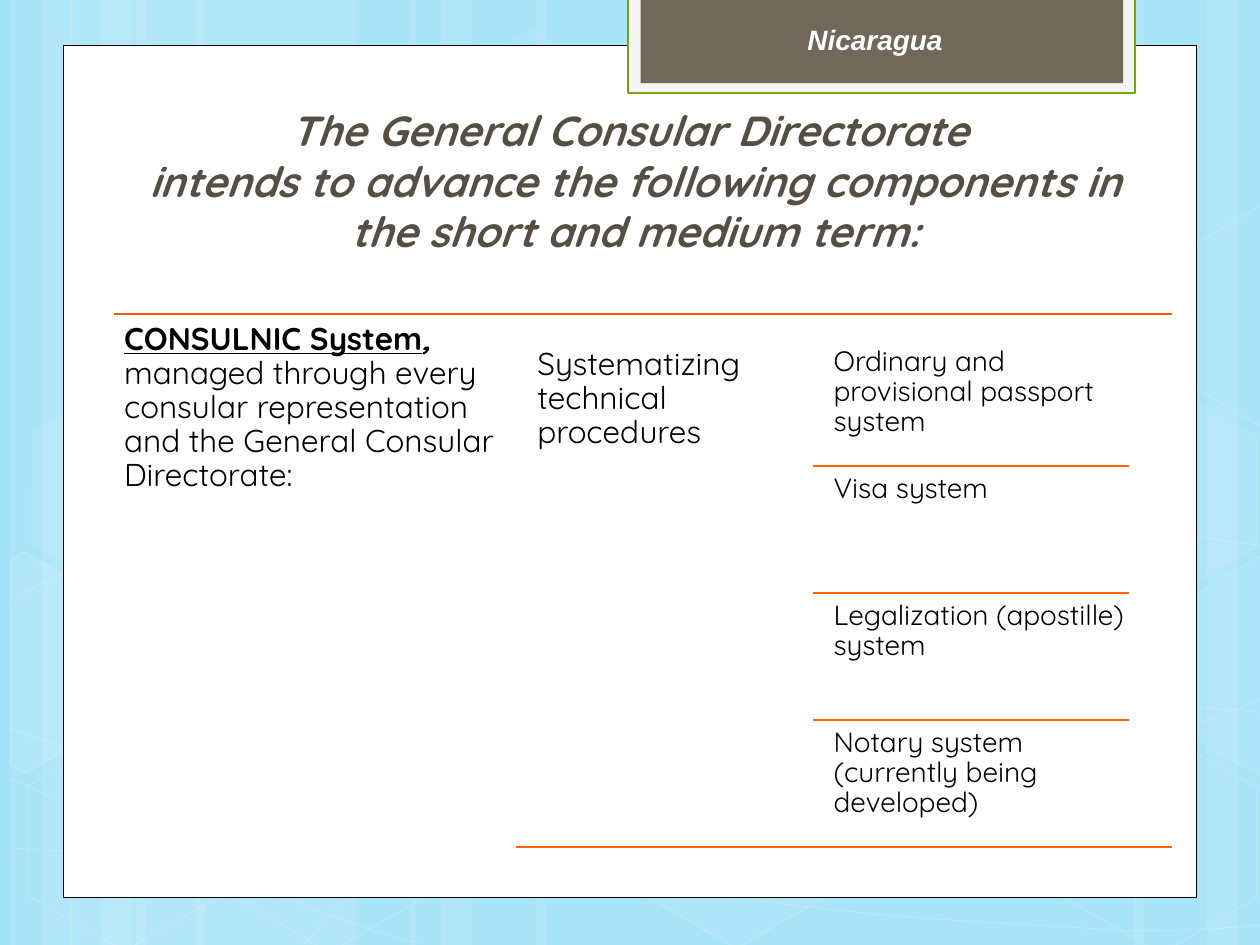
from lxml.etree import SubElement
from pptx import Presentation
from pptx.dml.color import RGBColor
from pptx.enum.shapes import MSO_CONNECTOR as Link, MSO_SHAPE as Preset
from pptx.enum.text import MSO_ANCHOR as Anchor, PP_ALIGN as Align
from pptx.oxml.ns import qn
from pptx.util import Inches, Pt

WHITE = RGBColor(0xFF, 0xFF, 0xFF)
BLACK = RGBColor(0x00, 0x00, 0x00)
SKY = RGBColor(0xA1, 0xE2, 0xF9)
PALE = RGBColor(0xF5, 0xF5, 0xF5)
GREEN = RGBColor(0x74, 0xA5, 0x10)
TAUPE = RGBColor(0x71, 0x68, 0x5A)
BROWN = RGBColor(0x55, 0x4E, 0x43)
RUST = RGBColor(0xE7, 0x5D, 0x00)
ORANGE = RGBColor(0xFF, 0x67, 0x00)

COLS, ROWS = 100, 75

# Each streak: left column, width in columns
STREAKS = [(10.8, 17.5), (0.8, 5), (3.3, 8.3), (15.5, 17.5), (5.5, 5), (8, 8.3),
           (73.3, 17.5), (95.8, 5), (90, 8.3), (42.5, 30.8), (32.5, 5), (35, 8.3)]

# Each wave: a start point, then three Bezier points per segment
WAVES = [
    [(0.7, 67.3), (6.1, 67.6), (11.5, 67.9), (19, 67.8), (26.5, 67.7), (35.8, 67.5),
     (45.8, 66.5), (55.8, 65.5), (70, 63.6), (79.2, 61.7), (88.3, 59.8), (97.7, 56.8),
     (100.7, 55.1)],
    [(0.7, 47.7), (3.6, 46.1), (6.5, 44.6), (12.1, 43.1), (17.8, 41.6), (25.9, 39.4),
     (34.7, 38.7), (43.6, 38), (54.4, 37.9), (65.4, 38.7), (76.4, 39.5), (94.7, 42.6),
     (100.7, 43.4)],
    [(0.6, 61.7), (12.7, 67.2), (24.7, 72.7), (33.4, 74.9)],
    [(0.7, 57.8), (3.8, 58.9), (7, 60), (12.8, 61.6), (18.6, 63.1), (27.3, 65.6),
     (35.7, 67.3), (44, 69), (54.5, 70.8), (62.8, 71.8), (71.1, 72.9), (80, 73.3),
     (85.3, 73.6), (90.5, 74), (91.9, 73.8), (94.5, 73.8), (97.1, 73.7), (98.9, 73.5),
     (100.7, 73.4)],
    [(24.2, 74.9), (26, 72.9), (27.8, 70.9), (30.2, 69.1), (32.6, 67.3), (36, 65.3),
     (38.8, 63.9), (41.6, 62.5), (43.3, 61.9), (47, 60.9), (50.6, 59.9), (57.3, 58.5),
     (60.8, 57.8), (64.4, 57.1), (64.9, 57.1), (68, 56.9), (71.1, 56.6), (76, 56.3),
     (79.4, 56.2), (82.9, 56.1), (88.6, 56.2), (88.6, 56.2), (90.8, 56.2), (93.1, 56.2),
     (95.3, 56.2), (97.1, 56.3), (98.8, 56.4), (99.7, 56.5), (100.6, 56.6), (100.3, 56.5),
     (100.6, 56.6)],
]
WAVES[-1][-4:] = [(100.6, 56.6)]

# Each hexagon: left column, top row, fill opacity (None for no fill), line opacity
HEXAGONS = [(33.4, 3.6, 4, 8), (49.7, 58.9, 6, 12), (1.1, 59.1, None, 12),
            (1.4, 31.2, 7, 8), (17.4, 59.2, None, 12), (75.3, 45.3, 10, 12),
            (83.4, 59.3, None, 12), (83.4, 31.4, 7, 8)]

# Hexagons cut by the slide's edge: outline, fill opacity
CUT_HEXAGONS = [
    ([(0.8, 44.5), (1.9, 43.8), (9.6, 48.2), (9.5, 57), (2, 61.4), (0.8, 60.7)], 10),
    ([(92.6, 48.5), (100.1, 44.1), (100.9, 44.6), (100.9, 61.3), (100.2, 61.7),
      (92.6, 57.3)], 4),
    ([(92.6, 20.7), (100.1, 16.3), (101, 16.8), (100.9, 33.5), (100.2, 33.9),
      (92.6, 29.5)], None),
]

SYSTEMS = ["Ordinary and provisional passport system", "Visa system",
           "Legalization (apostille) system", "Notary system (currently being developed)"]


def write(paragraph, text, size=18, font="Quicksand", color=BLACK, bold=False,
          italic=False, underline=False):
    run = paragraph.add_run()
    run.text = text
    style = run.font
    style.name, style.size, style.color.rgb = font, Pt(size), color
    style.bold, style.italic, style.underline = bold, italic, underline


def set_alpha(holder, percent):
    """Make the solid fill inside a fill or line element see-through."""
    color = holder.find(f"{qn('a:solidFill')}/{qn('a:srgbClr')}")
    SubElement(color, qn("a:alpha"), val=str(percent * 1000))


def bend(shape):
    """Turn every three straight segments of a freeform into one Bezier curve."""
    route = shape.element.spPr.find(f".//{qn('a:path')}")
    segments = route.findall(qn("a:lnTo"))
    for i in range(0, len(segments), 3):
        curve = SubElement(route, qn("a:cubicBezTo"))
        for segment in segments[i:i + 3]:
            curve.append(segment[0])
            route.remove(segment)


class Canvas:
    def __init__(self, deck):
        self.col = deck.slide_width / COLS
        self.row = deck.slide_height / ROWS
        self.slide = deck.slides.add_slide(deck.slide_layouts[6])
        self.shapes = self.slide.shapes
        self.slide.background.fill.solid()
        self.slide.background.fill.fore_color.rgb = SKY

    def place(self, *grid):
        """Turn alternating columns and rows into slide lengths."""
        return [round(n * (self.row if i % 2 else self.col)) for i, n in enumerate(grid)]

    def paint(self, shape, fill, alpha, line, width, line_alpha):
        shape.shadow.inherit = False
        properties = shape.element.spPr
        if fill is None:
            shape.fill.background()
        else:
            shape.fill.solid()
            shape.fill.fore_color.rgb = fill
            if alpha:
                set_alpha(properties, alpha)
        if line is None:
            shape.line.fill.background()
        else:
            shape.line.color.rgb, shape.line.width = line, Pt(width)
            if line_alpha:
                set_alpha(properties.find(qn("a:ln")), line_alpha)

    def block(self, grid, preset=Preset.RECTANGLE, fill=None, alpha=None, line=None,
              width=1, line_alpha=None):
        shape = self.shapes.add_shape(preset, *self.place(*grid))
        self.paint(shape, fill, alpha, line, width, line_alpha)
        return shape

    def outline(self, points, closed=False, fill=None, alpha=None, width=1, line_alpha=12):
        start, *rest = [self.place(*point) for point in points]
        builder = self.shapes.build_freeform(*start)
        builder.add_line_segments(rest, close=closed)
        shape = builder.convert_to_shape()
        self.paint(shape, fill, alpha, WHITE, width, line_alpha)
        return shape

    def rule(self, left, right, row, color=ORANGE):
        line = self.shapes.add_connector(Link.STRAIGHT, *self.place(left, row, right, row))
        line.line.color.rgb, line.line.width = color, Pt(1.25)
        SubElement(line.element.spPr, qn("a:effectLst"))

    def text(self, grid, runs, size=18, insets=None, spacing=0.9, align=Align.LEFT):
        """Add a text box from (text, format) pairs that share one paragraph."""
        frame = self.shapes.add_textbox(*self.place(*grid)).text_frame
        frame.word_wrap = True
        across, down = insets or (Pt(0.3 * size), Pt(0.3 * size))
        frame.margin_left = frame.margin_right = across
        frame.margin_top = frame.margin_bottom = down
        paragraph = frame.paragraphs[0]
        paragraph.line_spacing, paragraph.alignment = spacing, align
        for words, style in runs:
            write(paragraph, words, size=size, **style)

    def title(self, grid, lines, **style):
        box = self.block(grid, Preset.ROUNDED_RECTANGLE)
        box.adjustments[0] = 0.5
        frame = box.text_frame
        frame.word_wrap, frame.vertical_anchor = True, Anchor.BOTTOM
        for i, line in enumerate(lines):
            paragraph = frame.add_paragraph() if i else frame.paragraphs[0]
            paragraph.alignment = Align.CENTER
            write(paragraph, line, **style)


def draw_backdrop(canvas):
    for left, width in STREAKS:
        canvas.block((left, 0, width, ROWS), fill=WHITE, alpha=10)
    for wave in WAVES:
        bend(canvas.outline(wave, width=0.5, line_alpha=20))
    for left, top, alpha, line_alpha in HEXAGONS:
        hexagon = canvas.block((left, top, 17.5, 15.2), Preset.HEXAGON, alpha and WHITE,
                               alpha, WHITE, line_alpha=line_alpha)
        hexagon.adjustments[0] = 0.285
        hexagon.rotation = 30
    for points, alpha in CUT_HEXAGONS:
        canvas.outline(points, True, alpha and WHITE, alpha)
    canvas.block((5, 3.6, 90, 67.65), fill=WHITE, line=BLACK, width=0.5)
    canvas.block((49.85, -0.2, 40.25, 7.6), fill=PALE, line=GREEN, width=1.25)
    canvas.block((50.85, -0.2, 38.3, 6.8), fill=TAUPE)


def draw_components(canvas):
    canvas.rule(9.05, 93.05, 24.9, RUST)
    canvas.text((9.1, 24.9, 31.9, 44.4), [
        ("CONSULNIC System", dict(bold=True, underline=True)),
        (",", dict(bold=True, italic=True)),
        (" managed through every consular representation and the General Consular "
         "Directorate:", {})])
    canvas.text((41.9, 26.9, 22.6, 40.3), [("Systematizing technical procedures ", {})])
    top, pitch = 26.9, 10.08
    for i, system in enumerate(SYSTEMS):
        row = top + i * pitch
        if i:
            canvas.rule(64.5, 89.6, row)
        canvas.text((65.5, row, 25, pitch), [(system, {})], size=16)
    canvas.rule(40.95, 93, top + len(SYSTEMS) * pitch)


def main():
    deck = Presentation()
    deck.slide_width, deck.slide_height = Inches(10), Inches(7.5)
    canvas = Canvas(deck)
    draw_backdrop(canvas)
    canvas.text((53.1, 1.3, 32.7, 3.7), [
        ("Nicaragua", dict(font="Arial", color=WHITE, bold=True, italic=True))],
        size=16, insets=(Inches(0.1), Inches(0.05)), spacing=1, align=Align.CENTER)
    canvas.title((7.5, 8.35, 85.8, 14.6), [
        "The General Consular Directorate ",
        "intends to advance the following components in the short and medium term:"],
        size=24, color=BROWN, bold=True, italic=True)
    draw_components(canvas)
    deck.save("out.pptx")


if __name__ == "__main__":
    main()
